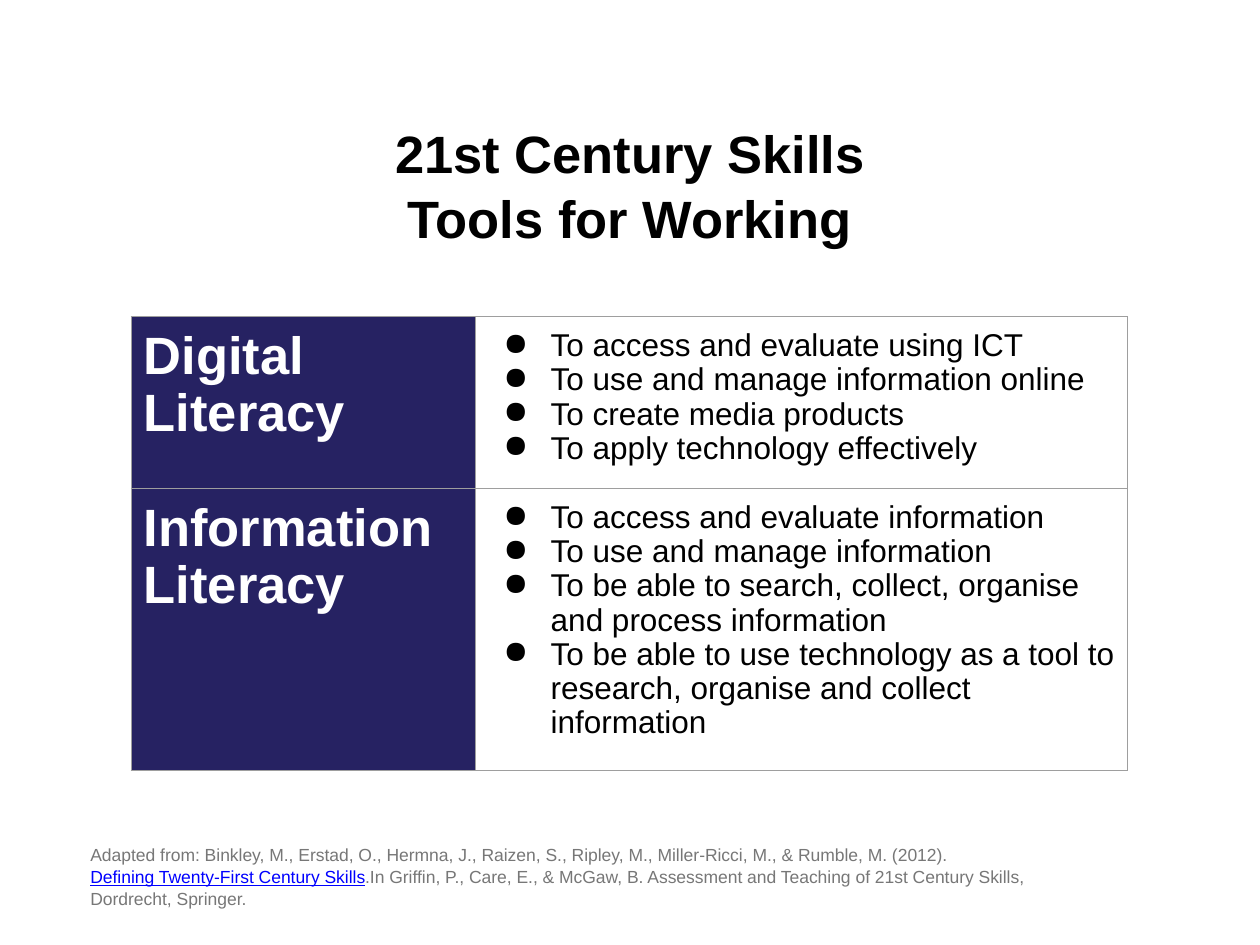
from lxml import etree
from pptx import Presentation
from pptx.dml.color import RGBColor
from pptx.enum.text import MSO_ANCHOR, PP_ALIGN
from pptx.oxml.ns import qn
from pptx.util import Pt

MIDDLE = MSO_ANCHOR.MIDDLE
CENTER = PP_ALIGN.CENTER
LEFT = PP_ALIGN.LEFT
BLACK = RGBColor(0x00, 0x00, 0x00)
WHITE = RGBColor(0xFF, 0xFF, 0xFF)
NAVY = RGBColor(0x26, 0x22, 0x62)
GREY = RGBColor(0x77, 0x77, 0x77)
BLUE = RGBColor(0x00, 0x00, 0xFF)
BORDER = RGBColor(0x9E, 0x9E, 0x9E)
FONT = "Arial"
INSET = Pt(7.2)

SKILLS = [
    ("Digital Literacy", [
        "To access and evaluate using ICT",
        "To use and manage information online",
        "To create media products",
        "To apply technology effectively",
    ]),
    ("Information Literacy", [
        "To access and evaluate information",
        "To use and manage information",
        "To be able to search, collect, organise and process information",
        "To be able to use technology as a tool to research, organise and collect information",
    ]),
]


def add_text(p, text, size=18, color=BLACK, bold=False, underline=False,
             align=LEFT, spacing=1.0, bullet=None):
    if bullet:
        pPr = p._p.get_or_add_pPr()
        pPr.set("marL", str(Pt(36)))
        pPr.set("indent", str(-Pt(27)))
        etree.SubElement(pPr, qn("a:buChar"), char=bullet)
    p.alignment = align
    p.line_spacing = spacing
    for i, line in enumerate(text.split("\n")):
        if i:
            p.add_line_break()
        r = p.add_run()
        r.text = line
        r.font.name = FONT
        r.font.size = Pt(size)
        r.font.bold = bold
        r.font.underline = underline
        r.font.color.rgb = color


def set_insets(box):
    box.margin_left = box.margin_right = INSET
    box.margin_top = box.margin_bottom = INSET


def add_box(s, x, y, w, h):
    tf = s.shapes.add_textbox(Pt(x), Pt(y), Pt(w), Pt(h)).text_frame
    tf.word_wrap = True
    tf.vertical_anchor = MIDDLE
    set_insets(tf)
    return tf


def add_title(s, x, y, w, h):
    tf = add_box(s, x, y, w, h)
    add_text(tf.paragraphs[0], "21st Century Skills\nTools for Working",
             size=30, bold=True, align=CENTER, spacing=1.04)


def add_source(s, x, y, w, h):
    tf = add_box(s, x, y, w, h)
    style = {"size": 10, "spacing": 1.04}
    add_text(tf.paragraphs[0],
             "Adapted from: Binkley, M., Erstad, O., Hermna, J., Raizen, S., "
             "Ripley, M., Miller-Ricci, M., & Rumble, M. (2012).",
             color=GREY, **style)
    p = tf.add_paragraph()
    add_text(p, "Defining Twenty-First Century Skills", color=BLUE,
             underline=True, **style)
    add_text(p, ".In Griffin, P., Care, E., & McGaw, B. Assessment and Teaching "
             "of 21st Century Skills, \nDordrecht, Springer.", color=GREY, **style)


def style_cell(cell, fill):
    set_insets(cell)
    tcPr = cell._tc.get_or_add_tcPr()
    for side in ("a:lnL", "a:lnR", "a:lnT", "a:lnB"):
        ln = etree.SubElement(tcPr, qn(side), w=str(Pt(0.75)))
        solid = etree.SubElement(ln, qn("a:solidFill"))
        etree.SubElement(solid, qn("a:srgbClr"), val=str(BORDER))
    if fill is None:
        cell.fill.background()
    else:
        cell.fill.solid()
        cell.fill.fore_color.rgb = fill


def add_skills_table(s, x, y, w, h):
    table = s.shapes.add_table(len(SKILLS), 2, Pt(x), Pt(y), Pt(w), Pt(h)).table
    table.first_row = False
    table.horz_banding = False
    label_w = 196.5
    table.columns[0].width = Pt(label_w)
    table.columns[1].width = Pt(w - label_w)
    first_h = 95
    for row, height in zip(table.rows, (first_h, h - first_h)):
        row.height = Pt(height)
    for i, (name, points) in enumerate(SKILLS):
        label, body = table.cell(i, 0), table.cell(i, 1)
        style_cell(label, NAVY)
        style_cell(body, None)
        add_text(label.text_frame.paragraphs[0], name, size=30, color=WHITE,
                 bold=True, spacing=0.97)
        tf = body.text_frame
        for j, point in enumerate(points):
            p = tf.add_paragraph() if j else tf.paragraphs[0]
            add_text(p, point, spacing=0.97, bullet="●")


def main():
    prs = Presentation()
    prs.slide_width, prs.slide_height = Pt(720), Pt(540)
    s = prs.slides.add_slide(prs.slide_layouts[6])
    add_source(s, 44.6, 479.5, 631.4, 42.5)
    add_title(s, 36, 60, 648, 90)
    add_skills_table(s, 75, 180.9, 569.5, 250)
    prs.save("out.pptx")


if __name__ == "__main__":
    main()
